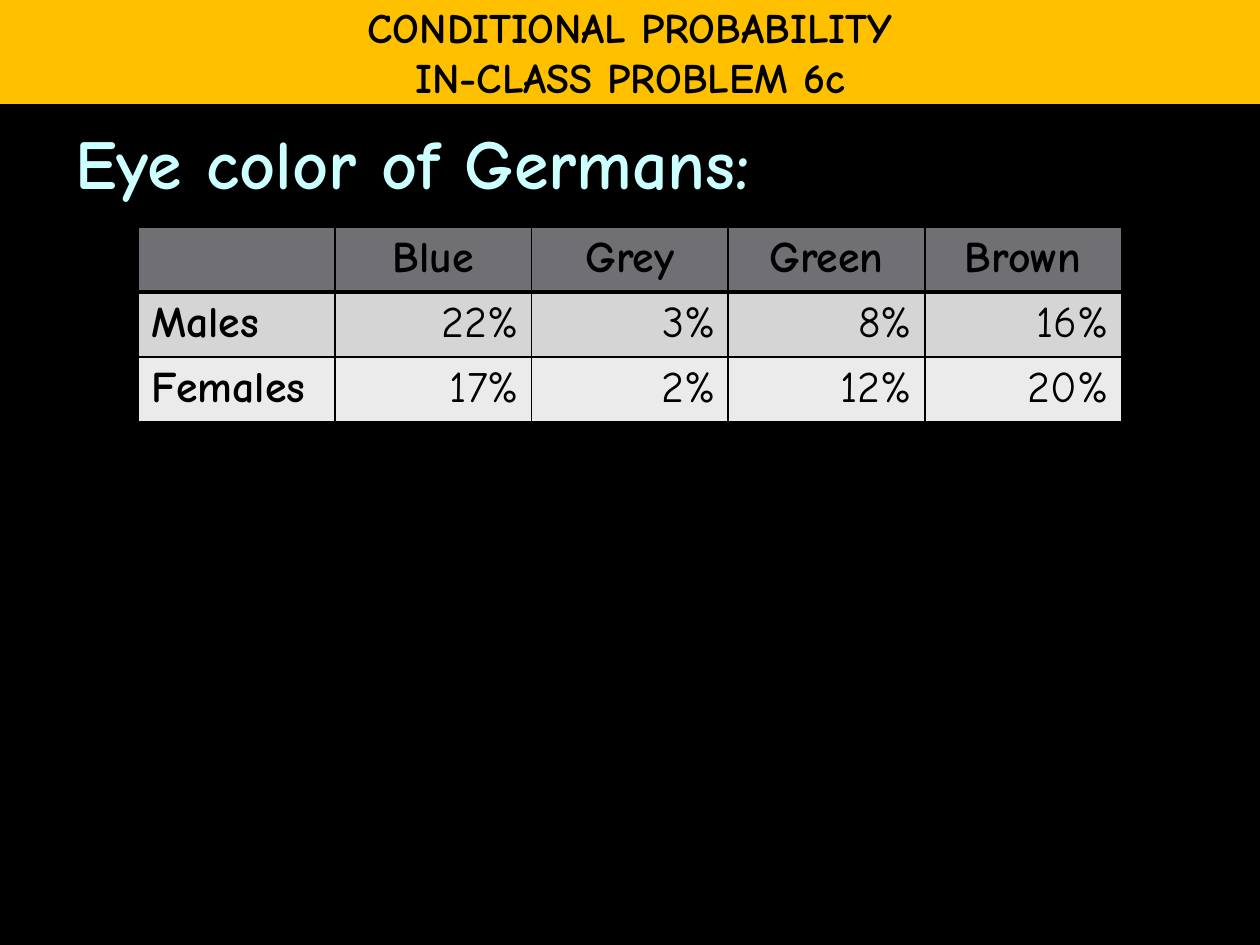
from dataclasses import dataclass

from lxml import etree
from pptx import Presentation
from pptx.dml.color import RGBColor
from pptx.enum.shapes import MSO_SHAPE
from pptx.enum.text import MSO_ANCHOR, PP_ALIGN
from pptx.oxml.ns import qn
from pptx.util import Inches, Pt

RECTANGLE = MSO_SHAPE.RECTANGLE
TOP, MIDDLE = MSO_ANCHOR.TOP, MSO_ANCHOR.MIDDLE
LEFT, CENTER, RIGHT = PP_ALIGN.LEFT, PP_ALIGN.CENTER, PP_ALIGN.RIGHT


@dataclass(frozen=True)
class Theme:
    font: str = "Comic Neue"
    background: str = "000000"
    banner: str = "FFC000"
    ink: str = "000000"
    heading: str = "CCFFFF"
    header_fill: str = "6F6F74"
    row_fills: tuple = ("D5D5D6", "EBEBEB")
    heading_size: int = 40
    banner_size: int = 24
    table_size: int = 25
    thin_rule: int = 1
    header_rule: int = 3


class SlideBuilder:
    """Places elements by shares of the slide's width and height."""

    def __init__(self, deck, theme):
        self.deck, self.theme = deck, theme
        self.slide = deck.slides.add_slide(deck.slide_layouts[6])
        self.paint(self.slide.background, theme.background)

    def box(self, left, top, width, height):
        across, down = self.deck.slide_width, self.deck.slide_height
        return (int(left * across), int(top * down),
                int(width * across), int(height * down))

    def paint(self, target, color):
        target.fill.solid()
        target.fill.fore_color.rgb = RGBColor.from_string(color)

    def set_text(self, frame, text, size, color, bold=True, align=LEFT):
        frame.text = text
        for paragraph in frame.paragraphs:
            paragraph.alignment = align
            for run in paragraph.runs:
                run.font.name = self.theme.font
                run.font.size = Pt(size)
                run.font.bold = bold
                run.font.color.rgb = RGBColor.from_string(color)

    def heading(self, text, *place):
        frame = self.slide.shapes.add_textbox(*self.box(*place)).text_frame
        frame.word_wrap = True
        frame.vertical_anchor = TOP
        self.set_text(frame, text, self.theme.heading_size, self.theme.heading)
        frame.paragraphs[0].space_before = Pt(0.2 * self.theme.heading_size)

    def banner(self, text, *place):
        band = self.slide.shapes.add_shape(RECTANGLE, *self.box(*place))
        band.shadow.inherit = False
        self.paint(band, self.theme.banner)
        band.line.fill.background()
        band.text_frame.word_wrap = False
        band.text_frame.vertical_anchor = MIDDLE
        self.set_text(band.text_frame, text, self.theme.banner_size,
                      self.theme.ink, align=CENTER)

    def cell_borders(self, cell, bottom, top):
        """Rule all four sides; borders must precede the fill in the XML."""
        thin = self.theme.thin_rule
        sides = (("L", thin), ("R", thin), ("T", top), ("B", bottom))
        properties = cell._tc.get_or_add_tcPr()
        for position, (side, points) in enumerate(sides):
            line = etree.Element(qn(f"a:ln{side}"), w=str(Pt(points)))
            solid = etree.SubElement(line, qn("a:solidFill"))
            etree.SubElement(solid, qn("a:srgbClr"), val=self.theme.ink)
            properties.insert(position, line)

    def table(self, rows, *place):
        theme = self.theme
        table = self.slide.shapes.add_table(
            len(rows), len(rows[0]), *self.box(*place)).table
        fills = (theme.header_fill, *theme.row_fills)
        for r, (values, color) in enumerate(zip(rows, fills)):
            for c, value in enumerate(values):
                cell = table.cell(r, c)
                self.paint(cell, color)
                self.cell_borders(
                    cell,
                    bottom=theme.header_rule if r == 0 else theme.thin_rule,
                    top=theme.header_rule if r == 1 else theme.thin_rule)
                align = CENTER if r == 0 else LEFT if c == 0 else RIGHT
                self.set_text(cell.text_frame, value, theme.table_size,
                              theme.ink, bold=r == 0 or c == 0, align=align)


def main():
    deck = Presentation()
    deck.slide_width, deck.slide_height = Inches(10), Inches(7.5)
    page = SlideBuilder(deck, Theme())
    page.heading("Eye color of Germans:", 0.05, 0.12, 0.9, 0.82)
    page.banner("CONDITIONAL PROBABILITY\nIN-CLASS PROBLEM 6c",
                0, 0, 1, 0.11)
    eye_colors = [
        ("", "Blue", "Grey", "Green", "Brown"),
        ("Males", "22%", "3%", "8%", "16%"),
        ("Females", "17%", "2%", "12%", "20%"),
    ]
    page.table(eye_colors, 0.11, 0.24, 0.78, 0.2)
    deck.save("out.pptx")


if __name__ == "__main__":
    main()
